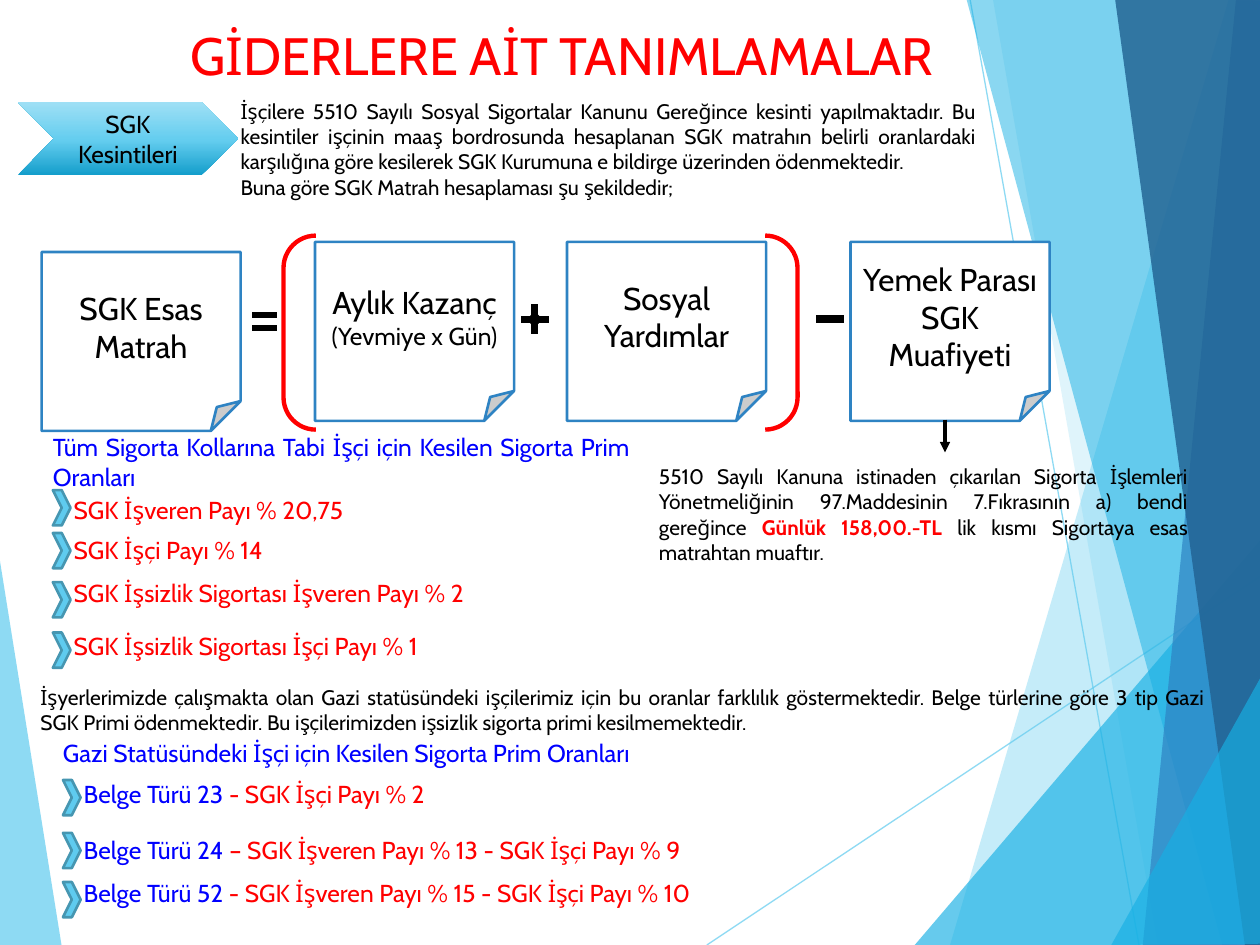
from copy import deepcopy
from dataclasses import dataclass

from lxml import etree
from pptx import Presentation
from pptx.dml.color import RGBColor
from pptx.enum import shapes as kinds, text as txt
from pptx.oxml import ns
from pptx.util import Inches, Pt

FONT = "Cabin"
BLACK, WHITE, RED, BLUE = "000000", "FFFFFF", "FF0000", "0000FF"
SKY, CYAN, STEEL, NAVY = "5FCBEF", "17B0E4", "2E83C3", "226292"
MARKER_EDGE = "4696B1"
Shape = kinds.MSO_SHAPE
Align = txt.PP_ALIGN


@dataclass(frozen=True)
class Run:
    text: str
    size: float
    color: str = BLACK
    bold: bool = False


@dataclass(frozen=True)
class Box:
    left: float
    top: float
    width: float
    height: float

    def emu(self) -> list[int]:
        return [Inches(v) for v in (self.left, self.top, self.width, self.height)]


@dataclass(frozen=True)
class Facet:
    color: str
    alpha: int
    points: list[tuple[float, float]]


@dataclass(frozen=True)
class Rate:
    marker_top: float
    text_top: float
    runs: list[Run]


FACETS = [
    Facet(SKY, 70, [(-0.01, 4.39), (0.49, 7.51), (-0.01, 7.5)]),
    Facet(SKY, 36, [(9.75, 0), (7.54, 7.5), (10.02, 7.51), (10.01, 0.01)]),
    Facet(SKY, 20, [(7.88, -0.01), (9.19, 7.5), (10.01, 7.5), (10.01, -0.01)]),
    Facet(CYAN, 66, [(7.26, 7.5), (10, 4.29), (10.01, 7.5)]),
    Facet(CYAN, 50, [(7.67, -0.01), (9.7, 7.5), (10.01, 7.49), (10.01, -0.01)]),
    Facet(STEEL, 70, [(9.81, -0.01), (9.07, 7.5), (10.01, 7.5), (10, -0.01)]),
    Facet(NAVY, 82, [(8.85, -0.01), (9.88, 7.5), (10.02, 7.5), (10, -0.01)]),
    Facet(CYAN, 66, [(8.82, 7.5), (10.02, 5.35), (10.02, 7.49)]),
]
NOTES = [
    Box(0.32, 3.42, 0, 0),
]
GENERAL_RATES = [
    Rate(3.89, 3.92, [Run("SGK İşveren Payı % 20,75", 14, RED)]),
    Rate(4.23, 4.24, [Run("SGK İşçi Payı % 14", 14, RED)]),
    Rate(4.62, 4.58, [Run("SGK İşsizlik Sigortası İşveren Payı % 2", 14, RED)]),
    Rate(5.02, 5, [Run("SGK İşsizlik Sigortası İşçi Payı % 1", 14, RED)]),
]
VETERAN_RATES = [
    Rate(6.19, 6.17, [Run("Belge Türü 23 ", 14, BLUE), Run("- SGK İşçi Payı % 2", 14, RED)]),
    Rate(6.61, 6.62, [Run("Belge Türü 24 ", 14, BLUE),
                      Run("– SGK İşveren Payı % 13 - SGK İşçi Payı % 9", 14, RED)]),
    Rate(7, 6.96, [Run("Belge Türü 52", 14, BLUE),
                   Run(" - SGK İşveren Payı % 15 - SGK İşçi Payı % 10", 14, RED)]),
]
TERMS = [
    (0.33, 2, [[Run("SGK Esas Matrah", 18)]]),
    (2.5, 1.92, [[Run("Aylık Kazanç", 18)], [Run("(Yevmiye x Gün)", 14)]]),
    (4.5, 1.92, [[Run("Sosyal Yardımlar", 18)]]),
    (6.75, 1.92, [[Run("Yemek Parası SGK Muafiyeti", 18)]]),
]
OPERATORS = [
    (Shape.MATH_EQUAL, Box(1.95, 2.41, 0.3, 0.29)),
    (Shape.MATH_PLUS, Box(4.08, 2.36, 0.33, 0.35)),
    (Shape.MATH_MINUS, Box(6.42, 2.36, 0.33, 0.35)),
]


def paint(color_format, color: str, alpha: int = 100) -> None:
    """Set a fill or line or font colour, with opacity in percent."""
    color_format.rgb = RGBColor.from_string(color)
    if alpha < 100:
        for node in color_format._xFill.iter(ns.qn("a:srgbClr")):
            etree.SubElement(node, ns.qn("a:alpha"), val=str(alpha * 1000))


def write(frame, paragraphs: list[list[Run]], align, before: float = 0) -> None:
    frame.word_wrap = True
    for i, runs in enumerate(paragraphs):
        paragraph = frame.paragraphs[0] if i == 0 else frame.add_paragraph()
        paragraph.alignment = align
        paragraph.space_before = Pt(before)
        for item in runs:
            run = paragraph.add_run()
            run.text = item.text
            run.font.name, run.font.size, run.font.bold = FONT, Pt(item.size), item.bold
            paint(run.font.color, item.color)


def add_text(slide, box: Box, *paragraphs: list[Run], align=Align.JUSTIFY, before=0.5) -> None:
    frame = slide.shapes.add_textbox(*box.emu()).text_frame
    frame.margin_left = frame.margin_right = frame.margin_bottom = 0
    frame.margin_top = Inches(0.01)
    write(frame, list(paragraphs), align, before)


def add_preset(slide, kind, box: Box, fill: str = "", line: str = "", width: float = 1.5):
    shape = slide.shapes.add_shape(kind, *box.emu())
    shape.shadow.inherit = False
    if fill:
        shape.fill.solid()
        paint(shape.fill.fore_color, fill)
    else:
        shape.fill.background()
    if line:
        paint(shape.line.color, line)
        shape.line.width = Pt(width)
    else:
        shape.line.fill.background()
    return shape


def add_label(shape, paragraphs: list[list[Run]]) -> None:
    shape.text_frame.vertical_anchor = txt.MSO_ANCHOR.MIDDLE
    write(shape.text_frame, paragraphs, Align.CENTER)


def add_line(slide, start, end, color: str, width: float, alpha: int = 100):
    ends = [Inches(v) for v in (*start, *end)]
    line = slide.shapes.add_connector(kinds.MSO_CONNECTOR.STRAIGHT, *ends)
    paint(line.line.color, color, alpha)
    line.line.width = Pt(width)
    etree.SubElement(line._element.spPr, ns.qn("a:effectLst"))
    return line


def add_facet(slide, facet: Facet) -> None:
    start, *rest = [(Inches(x), Inches(y)) for x, y in facet.points]
    builder = slide.shapes.build_freeform(*start)
    builder.add_line_segments(rest, close=True)
    shape = builder.convert_to_shape()
    shape.shadow.inherit = False
    shape.line.fill.background()
    shape.fill.solid()
    paint(shape.fill.fore_color, facet.color, facet.alpha)


def add_rates(slide, left: float, rates: list[Rate]) -> None:
    for rate in rates:
        add_preset(slide, Shape.CHEVRON, Box(left, rate.marker_top, 0.14, 0.28), SKY, MARKER_EDGE)
        add_text(slide, Box(left + 0.165, rate.text_top, 5.5, 0.24), rate.runs)


def add_topic(slide) -> None:
    topic = add_preset(slide, Shape.CHEVRON, Box(0.14, 0.81, 1.75, 0.58))
    topic.fill.gradient()
    topic.fill.gradient_angle = 90
    first = topic.fill.gradient_stops[0]._gs
    first.addnext(deepcopy(first))
    stops = [(0, "149ECB"), (0.48, "64CDEF"), (1, "9FE0F5")]
    for stop, (position, color) in zip(topic.fill.gradient_stops, stops):
        stop.position = position
        paint(stop.color, color)
    add_label(topic, [[Run("SGK Kesintileri", 14)]])


def main() -> None:
    deck = Presentation()
    deck.slide_width, deck.slide_height = Inches(10), Inches(7.5)
    slide = deck.slides.add_slide(deck.slide_layouts[6])

    add_facet(slide, FACETS[0])
    add_line(slide, (5.61, 7.5), (10.01, 4.57), SKY, 0.75, 70)
    add_line(slide, (7.7, 0), (9.04, 7.5), SKY, 0.75, 70)
    for facet in FACETS[1:]:
        add_facet(slide, facet)

    add_text(slide, Box(0.67, 0.17, 7.58, 0.52),
             [Run("GİDERLERE AİT TANIMLAMALAR", 30, RED)], align=Align.CENTER, before=1)
    add_topic(slide)
    add_text(slide, Box(1.91, 0.77, 5.84, 1.02), [Run(
        "İşçilere 5510 Sayılı Sosyal Sigortalar Kanunu Gereğince kesinti yapılmaktadır. Bu "
        "kesintiler işçinin maaş bordrosunda hesaplanan SGK matrahın belirli oranlardaki "
        "karşılığına göre kesilerek SGK Kurumuna e bildirge üzerinden ödenmektedir.", 12)],
        [Run("Buna göre SGK Matrah hesaplaması şu şekildedir;", 12)])

    for left, top, paragraphs in TERMS:
        note = add_preset(slide, Shape.FOLDED_CORNER, Box(left, top, 1.58, 1.42), WHITE, STEEL)
        add_label(note, paragraphs)
    for kind, box in OPERATORS:
        add_preset(slide, kind, box, BLACK, WHITE)
    add_preset(slide, Shape.DOUBLE_BRACKET, Box(2.25, 1.87, 4.08, 1.54), line=RED, width=2.5)

    arrow = add_line(slide, (7.5, 3.33), (7.5, 3.59), BLACK, 1.75)
    etree.SubElement(arrow.line._get_or_add_ln(), ns.qn("a:tailEnd"), type="triangle")
    add_text(slide, Box(5.23, 3.67, 4.2, 0.82), [
        Run("5510 Sayılı Kanuna istinaden çıkarılan Sigorta İşlemleri Yönetmeliğinin "
            "97.Maddesinin 7.Fıkrasının a) bendi gereğince ", 12),
        Run("Günlük 158,00.-TL ", 12, RED, True),
        Run("lik kısmı Sigortaya esas matrahtan muaftır.", 12)])

    add_text(slide, Box(0.42, 3.42, 4.58, 0.48), [Run(
        "Tüm Sigorta Kollarına Tabi İşçi için Kesilen Sigorta Prim Oranları", 14, BLUE)])
    add_rates(slide, 0.42, GENERAL_RATES)
    add_text(slide, Box(0.32, 5.42, 9.25, 0.41), [Run(
        "İşyerlerimizde çalışmakta olan Gazi statüsündeki işçilerimiz için bu oranlar farklılık "
        "göstermektedir. Belge türlerine göre 3 tip Gazi SGK Primi ödenmektedir. Bu "
        "işçilerimizden işsizlik sigorta primi kesilmemektedir.", 12)])
    add_text(slide, Box(0.5, 5.85, 5, 0.24), [Run(
        "Gazi Statüsündeki İşçi için Kesilen Sigorta Prim Oranları", 14, BLUE)])
    add_rates(slide, 0.5, VETERAN_RATES)
    deck.save("out.pptx")


if __name__ == "__main__":
    main()
